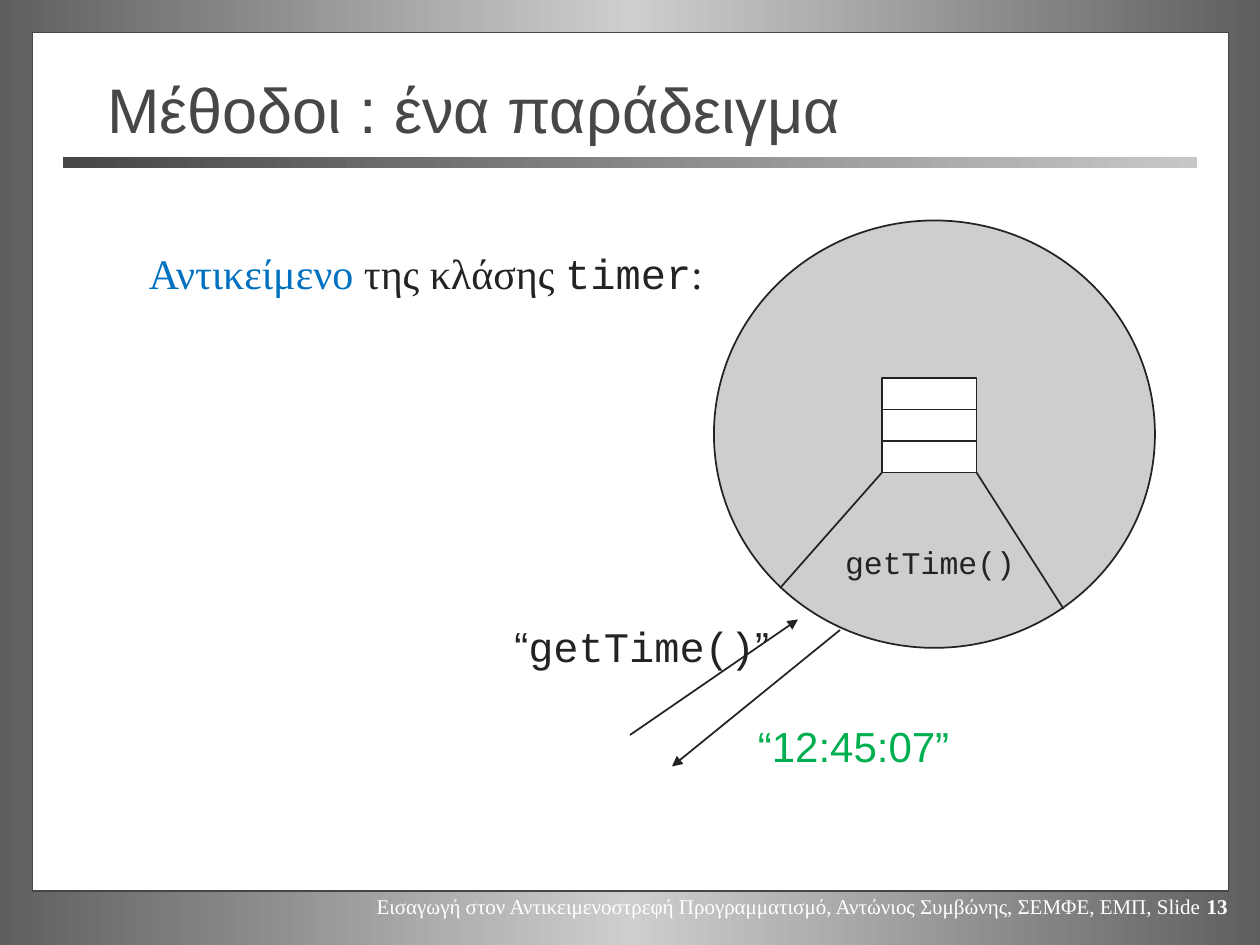
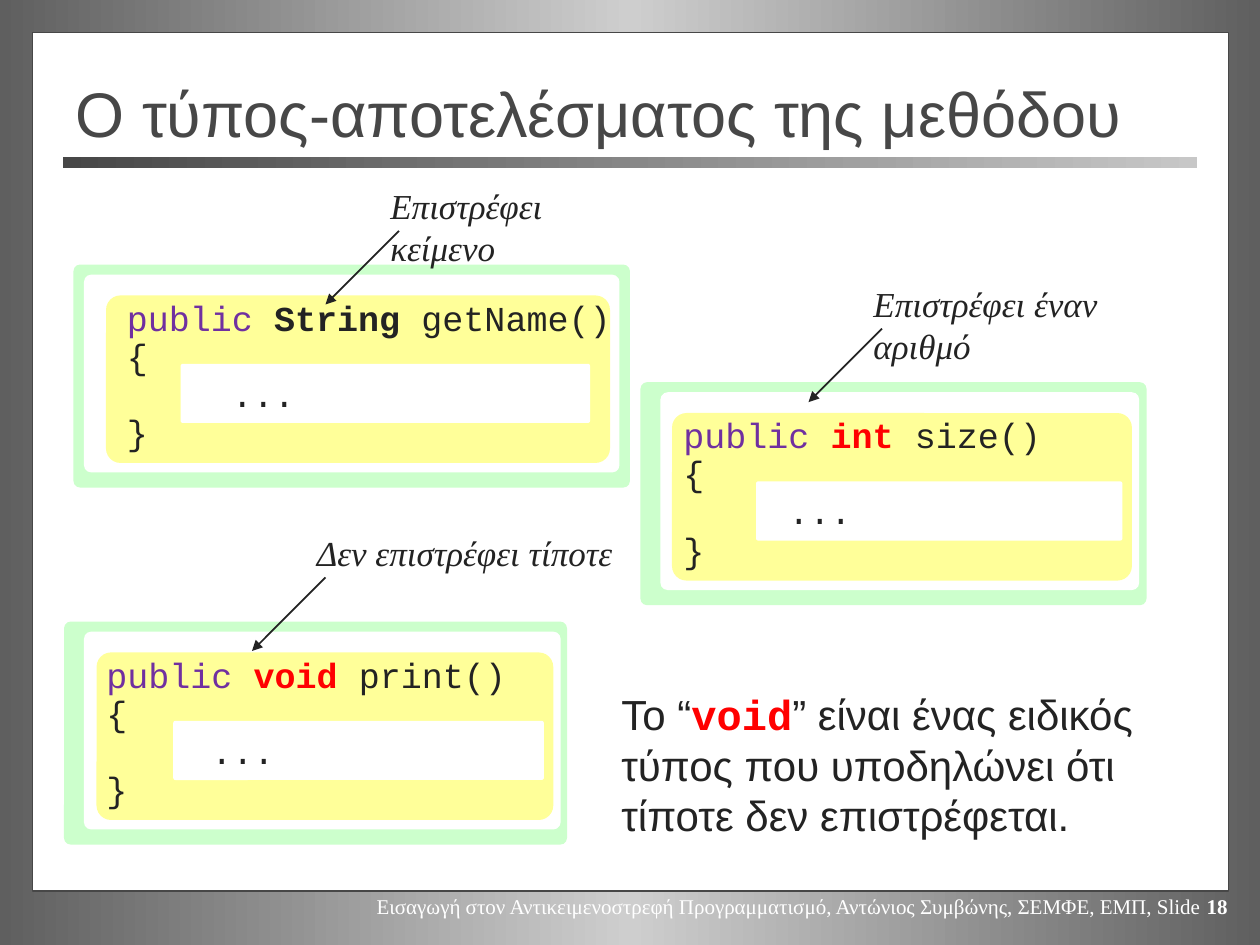
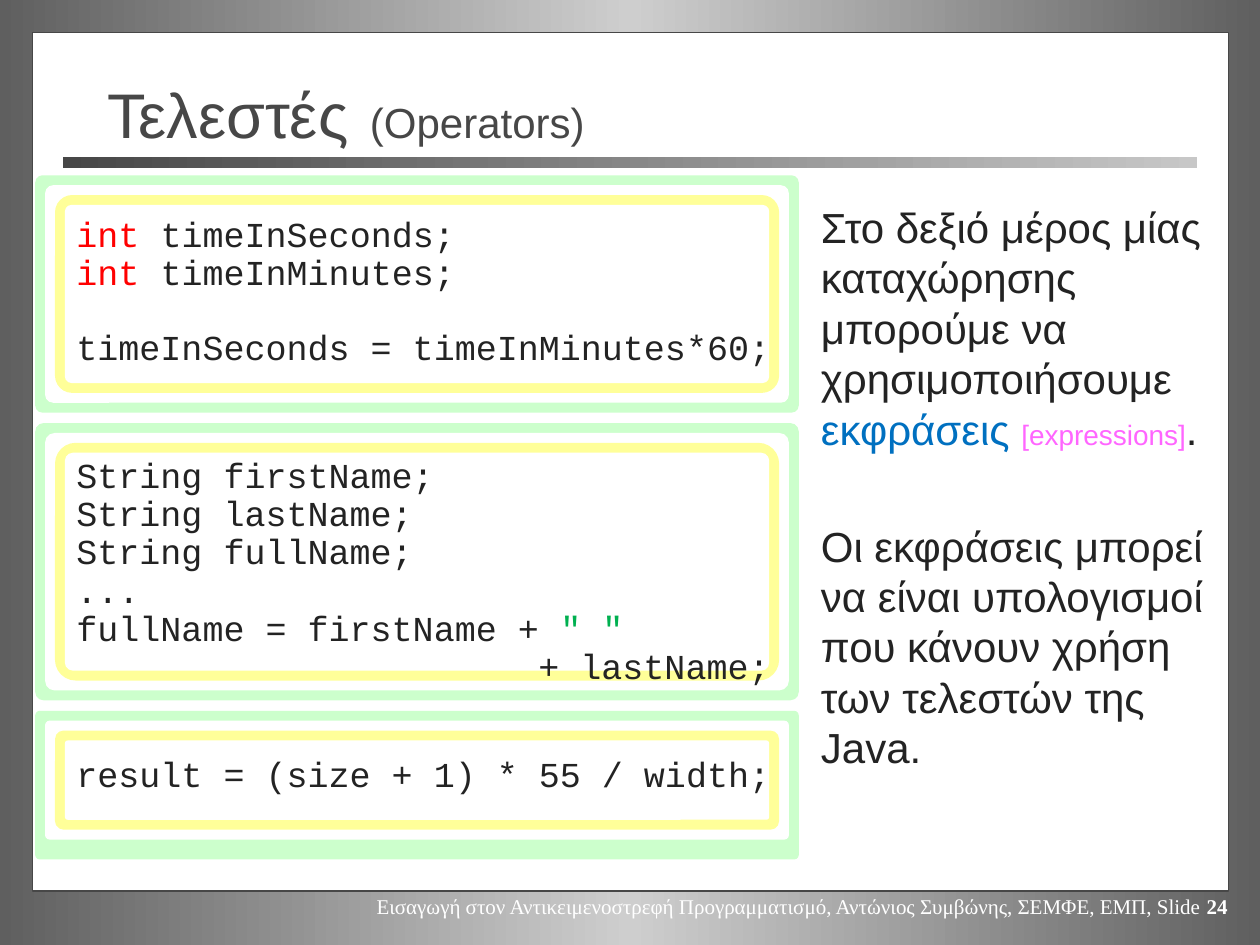
from copy import deepcopy
from lxml import etree
from pptx import Presentation
from pptx import util as u
from pptx.dml.color import RGBColor
from pptx.enum import shapes, text
from pptx.oxml.ns import qn

HUE = {
    "ink": "232323", "dark": "474747", "pale": "C7C7C7", "edge": "5F5F5F",
    "mid": "CECECE", "white": "FFFFFF", "mint": "CCFFCC", "cream": "FFFF99",
    "blue": "0070C0", "green": "00B050", "red": "FF0000",
    "plum": "7030A0", "pink": "FF66FF",
}
SANS, SERIF, MONO = "Arial", "Times New Roman", "Courier New"
CELL = u.Inches(1) / 12  # the slide is 120 columns by 90 rows
LAYERS = [("mint", .03), ("white", .037), ("cream", .087), ("white", .037)]
FOOT = ("Εισαγωγή στον Αντικειμενοστρεφή Προγραμματισμό, "
        "Αντώνιος Συμβώνης, ΣΕΜΦΕ, ΕΜΠ, Slide ")


def grid(*cells):
    return [u.Emu(round(c * CELL)) for c in cells]


def rgb(name):
    return RGBColor.from_string(HUE[name])


def fade(root, fill, *names):
    """Give a fill, held in the XML root, evenly spaced gradient stops."""
    fill.gradient()
    fill.gradient_angle = 0
    stops = root.find(".//" + qn("a:gsLst"))
    while len(stops) < len(names):
        stops.append(deepcopy(stops[0]))
    for i, (stop, name) in enumerate(zip(fill.gradient_stops, names)):
        stop.color.rgb = rgb(name)
        stop.position = i / (len(names) - 1)


def style(font, size=None, face=None, hue=None, bold=None, slant=None):
    if size:
        font.size = u.Pt(size)
    if face:
        font.name = face
    if hue:
        font.color.rgb = rgb(hue)
    if bold is not None:
        font.bold = bold
    if slant is not None:
        font.italic = slant


class Deck:
    def __init__(self):
        self.deck = Presentation()
        self.deck.slide_width, self.deck.slide_height = grid(120, 90)
        self.plan = self.deck.slide_layouts[5]
        self.slide = None
        master = self.deck.slide_master
        fade(master.element, master.background.fill, "edge", "mid", "edge")

    def page(self, number, at, *runs):
        """Start a slide with its title runs and its footer number."""
        self.slide = self.deck.slides.add_slide(self.plan)
        if len(self.deck.slides) == 1:
            self.share()
        title = self.slide.shapes.title
        title.left, title.top, title.width, title.height = grid(*at)
        frame = title.text_frame
        frame.auto_size = text.MSO_AUTO_SIZE.NONE
        frame.vertical_anchor = text.MSO_ANCHOR.MIDDLE
        self.put(frame.paragraphs[0], runs, size=36, face=SANS, hue="dark")
        foot = self.text((30, 84.5, 88.1, 3.6), [[FOOT, (str(number), {"bold": True})]],
                         gap=0, size=12, face=SERIF, hue="white")
        foot.text_frame.paragraphs[0].alignment = text.PP_ALIGN.RIGHT

    def share(self):
        """Draw the white sheet and title bar, then hand them to the layout."""
        sheet = self.shape("RECTANGLE", (3.1, 3.1, 113.9, 81.8), "white", "dark")
        bar = self.shape("RECTANGLE", (6, 15, 108, 1), "dark")
        fade(bar.element, bar.fill, "dark", "pale")
        for part in (sheet, bar):
            self.plan.shapes.element.append(part.element)

    def shape(self, kind, at, fill, line=None, bend=None):
        item = self.slide.shapes.add_shape(
            shapes.MSO_SHAPE[kind], *grid(*at))
        item.shadow.inherit = False
        item.fill.solid()
        item.fill.fore_color.rgb = rgb(fill)
        if line:
            item.line.color.rgb = rgb(line)
            item.line.width = u.Pt(1)
        else:
            item.line.fill.background()
        if bend:
            item.adjustments[0] = bend
        return item

    def line(self, start, end, arrow=False):
        item = self.slide.shapes.add_connector(
            shapes.MSO_CONNECTOR.STRAIGHT, *grid(*start, *end))
        item.line.color.rgb = rgb("ink")
        item.line.width = u.Pt(1)
        props = item.element.spPr
        if arrow:
            etree.SubElement(props.find(qn("a:ln")), qn("a:tailEnd"), type="triangle")
        etree.SubElement(props, qn("a:effectLst"))

    def put(self, para, runs, **base):
        para.alignment = text.PP_ALIGN.LEFT
        style(para.font, **base)
        for run in runs:
            words, change = (run, {}) if isinstance(run, str) else run
            piece = para.add_run()
            piece.text = words
            style(piece.font, **change)

    def text(self, at, paras, gap=4, **base):
        base = {"size": 24, "face": SANS, "hue": "ink", **base}
        box = self.slide.shapes.add_textbox(*grid(*at))
        frame = box.text_frame
        frame.word_wrap = True
        for i, runs in enumerate(paras):
            para = frame.add_paragraph() if i else frame.paragraphs[0]
            para.space_before = u.Pt(gap)
            self.put(para, runs, **base)
        return box

    def code(self, at, lines, indent=None, apart=None):
        """Set code; indent maps a line to columns, apart is a line after a gap."""
        box = self.text(at, lines, gap=5, size=20, face=MONO)
        paras = box.text_frame.paragraphs
        for para in paras:
            para.line_spacing = .7
        for i, cols in (indent or {}).items():
            paras[i]._p.get_or_add_pPr().set("marL", str(grid(cols)[0]))
        if apart:
            paras[apart].space_before = u.Pt(26)

    def panel(self, spans, rows):
        """Stack the four layers; spans are (left, width), rows (top, height)."""
        for (x, w), (y, h), (fill, bend) in zip(spans, rows, LAYERS):
            self.shape("ROUNDED_RECTANGLE", (x, y, w, h), fill, bend=bend)

    def method(self, top, spans, left, head):
        rows = [(0, 21.24), (.96, 18.84), (2.94, 15.96), (9.45, 5.64)]
        self.panel(spans, [(top + y, h) for y, h in rows])
        self.code((left, top + 3.5, 54, 16), [head, ["{"], ["..."], ["}"]], {2: 10})

    def nest(self, top, high, foot=0):
        """Nest four layers evenly; foot makes the outer one taller."""
        step = .94
        self.panel([(3.36 + step * i, 72.72 - 2 * step * i) for i in range(4)],
                   [(top + step * i, high - 2 * step * i + (0 if i else foot))
                    for i in range(4)])

    def note(self, at, words, start):
        """Add an italic remark and its arrow, which falls seven cells."""
        self.text(at, [[words]], size=20, face=SERIF, slant=True)
        x, y = start
        self.line(start, (x - 7, y + 7), arrow=True)


def timer(d):
    d.page(13, (9, 6.6, 102, 7.4), "Μέθοδοι : ένα παράδειγμα")
    d.text((13, 23, 60, 6), [[("Αντικείμενο", {"hue": "blue"}), " της κλάσης ",
                              ("timer", {"face": MONO}), ":"]], face=SERIF)
    d.shape("OVAL", (68, 21, 42, 40.7), "mid", "ink")
    d.text((79.3, 51.1, 22, 4.8), [["getTime()"]], gap=9, size=18, face=MONO)
    for i in range(3):
        d.shape("RECTANGLE", (84, 36 + 3 * i, 9, 3), "white", "ink")
    d.line((74.3, 56), (84, 45))
    d.line((101.3, 58), (93, 45))
    d.line((60, 70), (76, 59), arrow=True)
    d.line((80, 60), (64, 73), arrow=True)
    d.text((47.8, 58.5, 30, 6), [["“", ("getTime()", {"face": MONO}), "”"]])
    d.text((71, 68, 24, 6), [["“12:45:07”"]], hue="green")


def kinds(d):
    public = ("public ", {"hue": "plum"})
    loud = {"hue": "red", "bold": True}
    d.page(18, (6, 7, 105, 7.4), "Ο τύπος-αποτελέσματος της μεθόδου")
    d.method(59.2, [(6.1, 47.9), (8, 45.4), (9.2, 43.5), (16.5, 35.3)], 8.95,
             [public, ("void", loud), " print()"])
    d.method(36.4, [(61, 48.2), (62.9, 45.6), (64, 43.8), (72, 34.9)], 63.9,
             [public, ("int", loud), " size()"])
    d.method(25.2, [(7, 53), (8, 51), (10.1, 48), (17.2, 39)], 10.9,
             [public, ("String ", {"bold": True}), "getName()"])
    d.note((36, 17, 24, 9), "Επιστρέφει κείμενο", (38, 22))
    d.note((29, 50, 36, 5), "Δεν επιστρέφει τίποτε", (31, 55))
    d.note((82, 26.3, 27, 9), "Επιστρέφει έναν αριθμό", (84, 31.3))
    d.text((58, 65, 57.2, 15.7), [[
        "Το “", ("void", {"face": MONO, **loud}),
        "” είναι ένας ειδικός τύπος που υποδηλώνει ότι τίποτε δεν επιστρέφεται."]])


def signs(d):
    whole = ("int ", {"hue": "red"})
    d.page(24, (9, 6.6, 102, 7.4), "Τελεστές", (" ", {"size": 44}),
           ("(Operators)", {"size": 24}))
    d.nest(16.7, 22.6)
    d.nest(40.3, 26.4)
    d.nest(67.7, 13.2, foot=.95)
    d.code((6.1, 20.7, 72, 16), [[whole, "timeInSeconds;"], [whole, "timeInMinutes;"],
                                 ["timeInSeconds = timeInMinutes*60;"]], apart=2)
    d.code((6.1, 43.7, 72, 22), [
        ["String firstName;"], ["String lastName;"], ["String fullName;"], ["..."],
        ["fullName = firstName + ", ('" "', {"hue": "green"})],
        ["+ lastName;"]], {5: 44})
    d.code((6.1, 72.2, 72, 5), [["result = (size + 1) * 55 / width;"]])
    side = d.text((77, 18.6, 40, 56), [
        ["Στο δεξιό μέρος μίας καταχώρησης μπορούμε να χρησιμοποιήσουμε ",
         ("εκφράσεις ", {"hue": "blue"}),
         ("[expressions]", {"size": 16, "hue": "pink"}), "."],
        ["Οι εκφράσεις μπορεί να είναι υπολογισμοί που κάνουν χρήση "
         "των τελεστών της Java."]])
    side.text_frame.paragraphs[1].space_before = u.Pt(38)


def main():
    d = Deck()
    for build in (timer, kinds, signs):
        build(d)
    d.deck.save("out.pptx")


if __name__ == "__main__":
    main()
